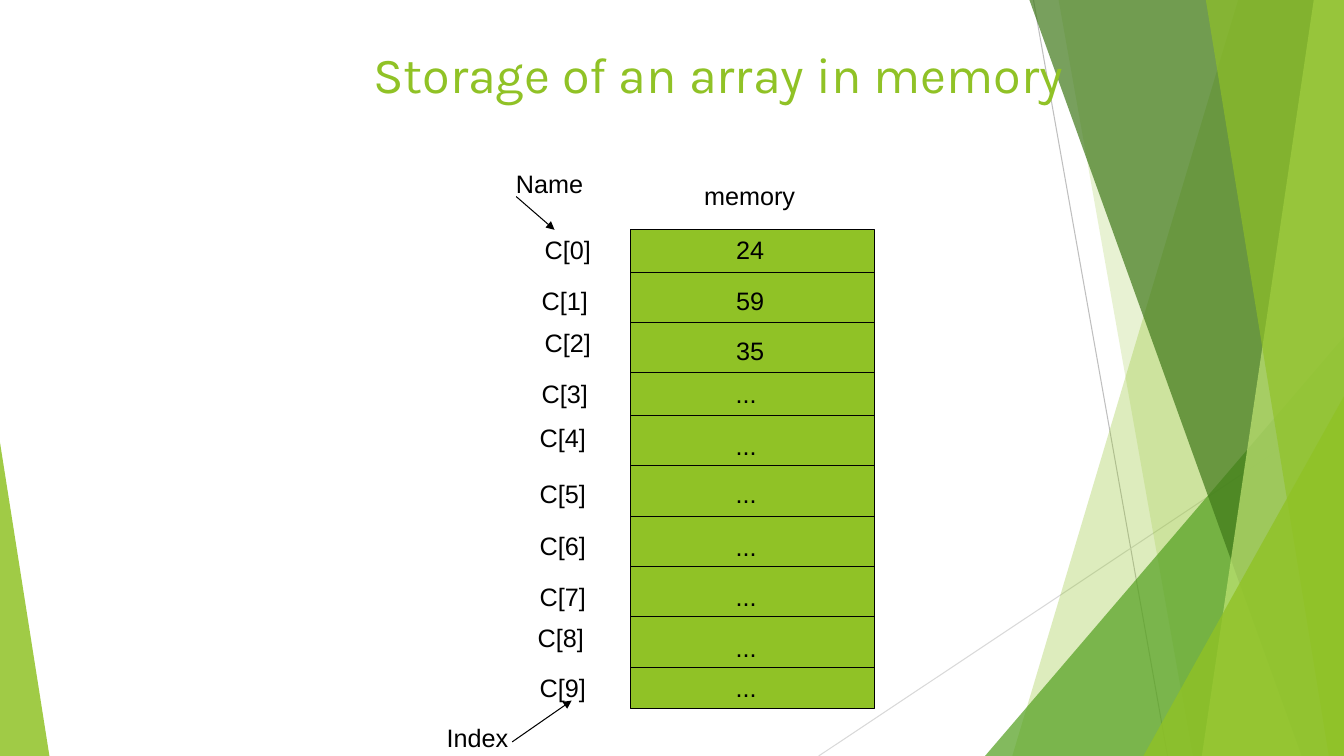
from pptx import Presentation
from pptx import util as u
from pptx.dml.color import RGBColor
from pptx.enum import shapes, text
from pptx.oxml.ns import qn
from lxml import etree

COLS, ROWS = 160, 90
GREEN, BLACK = "90C226", "000000"
TEXT_ROWS = 4.8
MEMORY_LEFT, MEMORY_TOP, MEMORY_COLS = 75, 27.4, 29
CELL_ROWS = [5, 6, 6, 5, 6, 6, 6, 6, 6, 5]
VALUES = ["24", "59", "35"] + ["..."] * 7
LABEL_RIGHTS = [71.6, 71.2, 71.6, 71.2, 70.9, 70.9, 70.9, 70.9, 70.7, 70.9]
LABEL_DROPS = [0, 1, 0, 0, 0.25, 1, 1.1, 1.2, 0, 0]
VALUE_DROPS = [0, 1, 1, 0, 1.2, 1, 1.2, 1.2, 1.2, 0]


def grid(*cells):
    """Turn grid units of a twelfth of an inch into slide lengths."""
    return [u.Inches(round(cell / 12, 2)) for cell in cells]


def color(fmt, value):
    """Set a colour format from a hex string."""
    fmt.rgb = RGBColor.from_string(value)


def paint(sp, fill, opacity=100, outline=None):
    """Give a shape a flat fill, some opacity and an optional thin outline."""
    sp.shadow.inherit = False
    sp.fill.solid()
    color(sp.fill.fore_color, fill)
    if opacity < 100:
        rgb = sp._element.spPr.find(qn("a:solidFill"))[0]
        etree.SubElement(rgb, qn("a:alpha"), val=str(opacity * 1000))
    if outline:
        color(sp.line.color, outline)
        sp.line.width = u.Pt(0.75)
    else:
        sp.line.fill.background()


def add_line(s, start, end, value=BLACK, arrow=False):
    """Draw a thin straight line, with an arrowhead at its end if asked."""
    line = s.shapes.add_connector(shapes.MSO_CONNECTOR.STRAIGHT,
                                  *grid(*start, *end))
    color(line.line.color, value)
    line.line.width = u.Pt(0.75)
    if arrow:
        etree.SubElement(line.line._get_or_add_ln(), qn("a:tailEnd"),
                         type="triangle")
    etree.SubElement(line._element.spPr, qn("a:effectLst"))


def add_band(s, top_x, bottom_x, fill, opacity):
    """Draw a slanted band that reaches the right edge of the slide."""
    corners = [grid(*point) for point in
               [(top_x, 0), (COLS, 0), (COLS, ROWS), (bottom_x, ROWS)]]
    builder = s.shapes.build_freeform(*corners[0])
    builder.add_line_segments(corners[1:], close=True)
    paint(builder.convert_to_shape(), fill, opacity)


def add_corner(s, left, top, cols, apex, fill, opacity):
    """Draw a triangle that stands on the bottom edge of the slide."""
    sp = s.shapes.add_shape(shapes.MSO_SHAPE.ISOSCELES_TRIANGLE,
                            *grid(left, top, cols, ROWS - top))
    sp.adjustments[0] = apex
    paint(sp, fill, opacity)


def add_text(s, words, left, top, cols, align=text.PP_ALIGN.CENTER):
    """Add one line of black Arial text."""
    tf = s.shapes.add_textbox(*grid(left, top, cols, TEXT_ROWS)).text_frame
    tf.word_wrap = True
    p = tf.paragraphs[0]
    p.text = words
    p.alignment = align
    p.font.name, p.font.size = "Arial", u.Pt(18)
    color(p.font.color, BLACK)


def add_title(s, words):
    """Place and format the title above the decoration."""
    title = s.shapes.title
    title.left, title.top, title.width, title.height = grid(36, 4.5, 99, 18.8)
    tf = title.text_frame
    tf.text = words
    tf.vertical_anchor = text.MSO_ANCHOR.TOP
    tf.auto_size = text.MSO_AUTO_SIZE.NONE
    p = tf.paragraphs[0]
    p.alignment = text.PP_ALIGN.CENTER
    p.font.name, p.font.size = "Karla", u.Pt(36)
    color(p.font.color, GREEN)
    s.shapes._spTree.append(title._element)


def add_decoration(s):
    """Draw the green facets along the slide's edges."""
    add_line(s, (123, 0), (139, ROWS), "BFBFBF")
    add_line(s, (COLS, 48.35), (97.4, ROWS), "D9D9D9")
    add_band(s, 147.4, 120.5, GREEN, 30)
    add_band(s, 126, 142, GREEN, 20)
    add_corner(s, 117.2, 40, 42.8, 1, "54A021", 72)
    add_band(s, 122.5, 154.9, "3F7819", 70)
    add_band(s, 156.4, 143, "C0E474", 70)
    add_band(s, 143.5, 158.2, GREEN, 65)
    add_corner(s, 136.1, 47.2, 23.9, 1, GREEN, 80)
    add_corner(s, 0, 52.7, 5.9, 0, GREEN, 85)


def add_memory(s):
    """Draw the memory block with its dividers, labels and values."""
    block = s.shapes.add_shape(
        shapes.MSO_SHAPE.RECTANGLE,
        *grid(MEMORY_LEFT, MEMORY_TOP, MEMORY_COLS, sum(CELL_ROWS)))
    paint(block, GREEN, outline=BLACK)
    for i, value in enumerate(VALUES):
        top = MEMORY_TOP + sum(CELL_ROWS[:i])
        if i:
            add_line(s, (MEMORY_LEFT, top), (MEMORY_LEFT + MEMORY_COLS, top))
        add_text(s, f"C[{i}]", LABEL_RIGHTS[i] - 10, top + LABEL_DROPS[i], 10,
                 text.PP_ALIGN.RIGHT)
        center = 89.3 if value.isdigit() else 88.8
        add_text(s, value, center - 3, top + VALUE_DROPS[i], 6)


def main():
    """Build the slide and save it."""
    prs = Presentation()
    prs.slide_width, prs.slide_height = u.Inches(13.33), u.Inches(7.5)
    s = prs.slides.add_slide(prs.slide_layouts[5])
    add_decoration(s)
    add_title(s, "Storage of an array in memory")
    add_memory(s)
    add_text(s, "Name", 60, 19.4, 10.8)
    add_line(s, (61.5, 23.4), (66, 27.4), arrow=True)
    add_text(s, "memory", 82.2, 20.9, 14)
    add_line(s, (61, 88.3), (68, 83.4), arrow=True)
    add_text(s, "Index", 51.6, 85.5, 10.4)
    prs.save("out.pptx")


if __name__ == "__main__":
    main()
